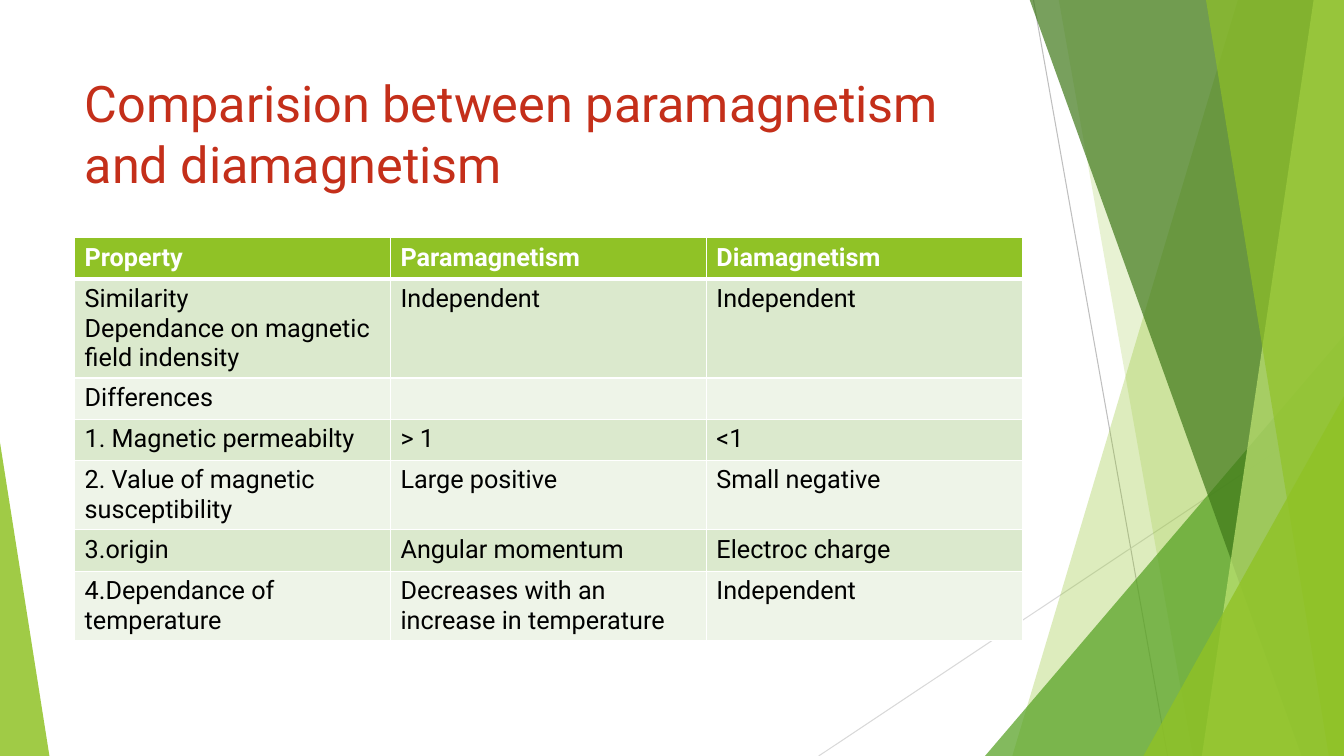
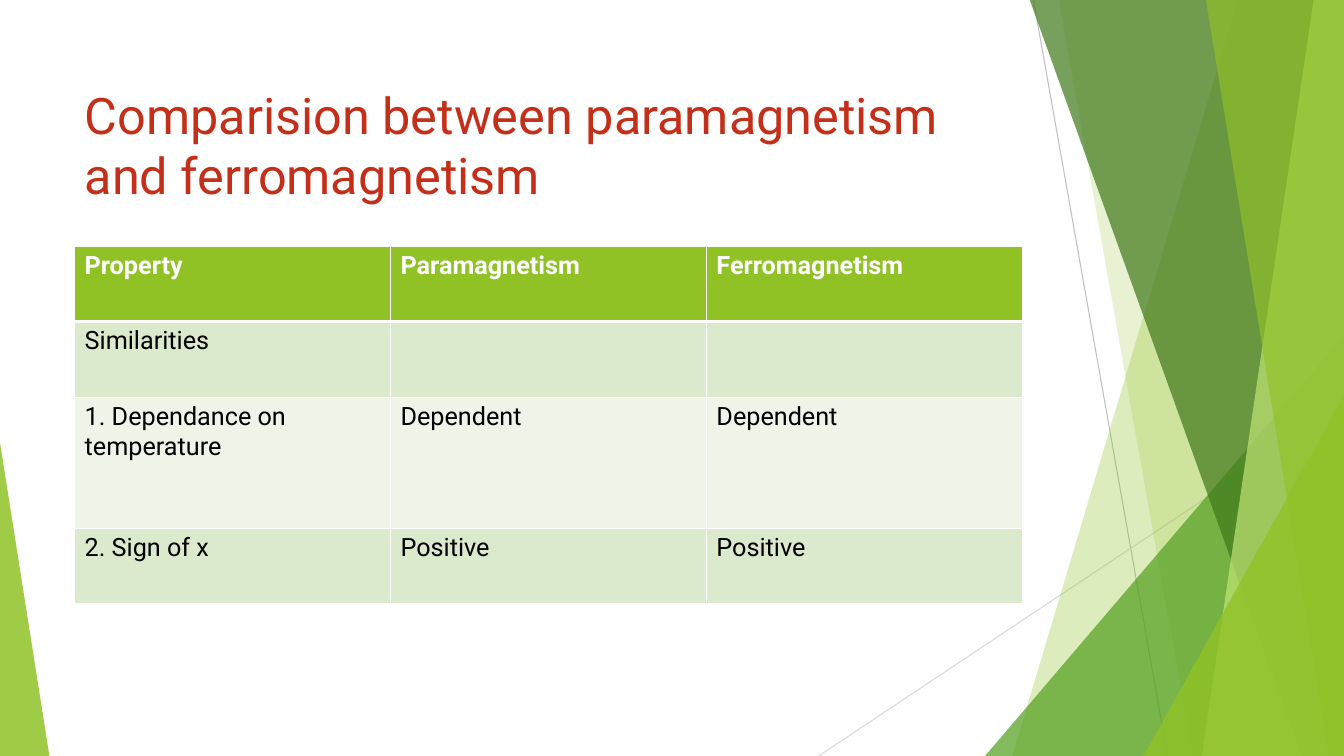
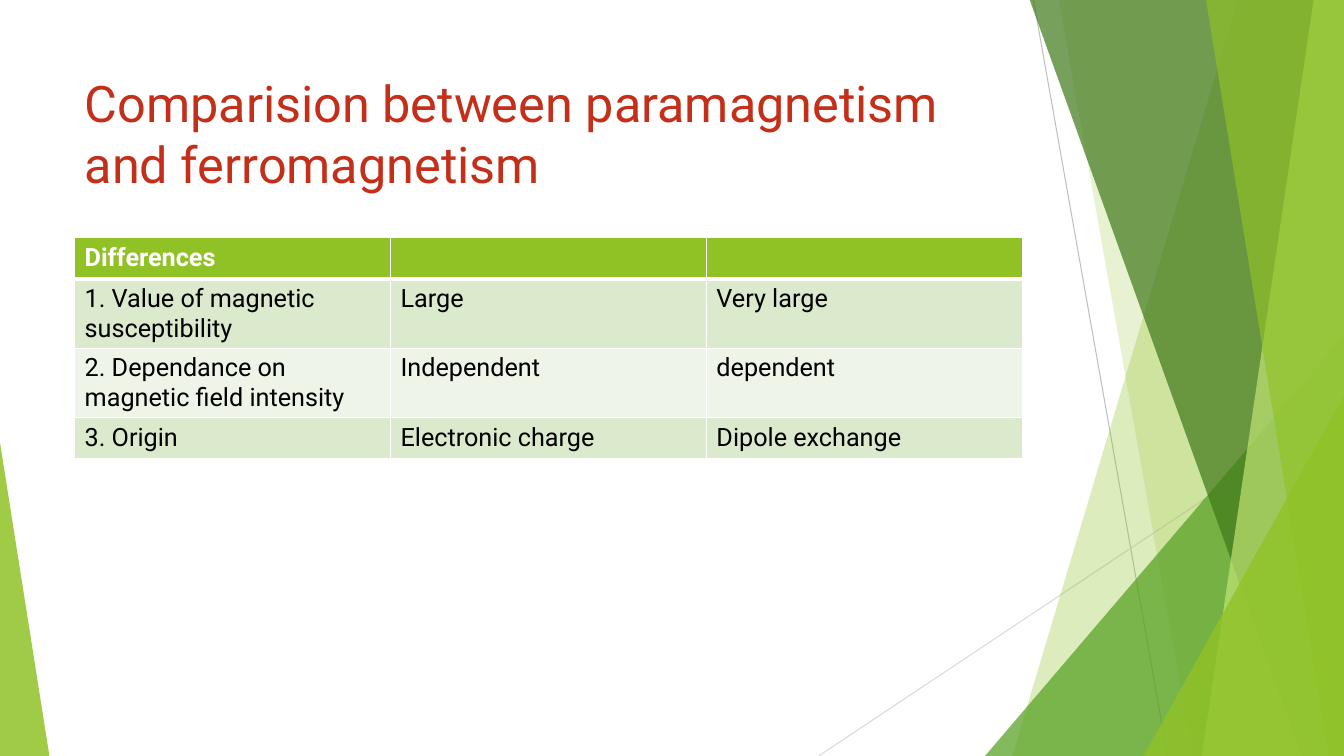
from lxml.etree import SubElement
from pptx import Presentation
from pptx.dml.color import RGBColor
from pptx.enum.shapes import MSO_CONNECTOR, MSO_SHAPE
from pptx.enum.text import MSO_ANCHOR, MSO_AUTO_SIZE, PP_ALIGN
from pptx.oxml import parse_xml
from pptx.oxml.ns import nsdecls, qn
from pptx.util import Inches, Pt

# Content
SLIDES = [
    {
        "title": "Comparision between paramagnetism and diamagnetism",
        "title_top": 0.67,
        "table_top": 2.36,
        "row_heights": [0.41] * 7,
        "rows": [
            ("Property", "Paramagnetism", "Diamagnetism"),
            ("Similarity\nDependance on magnetic field indensity", "Independent", "Independent"),
            ("Differences", "", ""),
            ("1. Magnetic permeabilty", "> 1", "<1"),
            ("2. Value of magnetic susceptibility", "Large positive", "Small negative"),
            ("3.origin", "Angular momentum", "Electroc charge"),
            ("4.Dependance of temperature", "Decreases with an increase in temperature",
             "Independent"),
        ],
    },
    {
        "title": "Comparision between paramagnetism and ferromagnetism",
        "title_top": 0.78,
        "table_top": 2.44,
        "row_heights": [0.75, 0.75, 1.3, 0.75],
        "rows": [
            ("Property", "Paramagnetism", "Ferromagnetism"),
            ("Similarities", "", ""),
            ("1. Dependance on temperature", "Dependent", "Dependent"),
            ("2. Sign of x", "Positive", "Positive"),
        ],
    },
    {
        "title": "Comparision between paramagnetism and ferromagnetism",
        "title_top": 0.67,
        "table_top": 2.36,
        "row_heights": [0.41] * 4,
        "rows": [
            ("Differences", "", ""),
            ("1. Value of magnetic susceptibility", "Large", "Very large"),
            ("2. Dependance on magnetic field intensity", "Independent", "dependent"),
            ("3. Origin", "Electronic charge", "Dipole exchange"),
        ],
    },
]

# Shared style
COLORS = {
    "title": "C42F1A", "text": "000000", "white": "FFFFFF",
    "lime": "90C226", "green": "54A021", "forest": "3F7819", "pale": "C0E474",
    "odd_row": "DBE9CD", "even_row": "EEF4E8",
    "steep_line": "BFBFBF", "flat_line": "D9D9D9",
}
FONT = "Roboto"
WIDTH, HEIGHT = 13.33, 7.5
LEFT, CONTENT_WIDTH, TITLE_HEIGHT = 0.74, 9.4, 1.44
BAND_TOP = -0.01

# Backdrop, back to front: lines (from, to, color)
LINES = [
    ((10.25, 0), (11.58, HEIGHT), "steep_line"),
    ((WIDTH, 4.03), (8.12, HEIGHT), "flat_line"),
]
# Bands run to the right edge (top x, bottom x); triangles are (left, top, width, tip)
FACETS = [
    ("band", (12.28, 10.04), "lime", 30),
    ("band", (10.5, 11.83), "lime", 20),
    ("triangle", (9.77, 3.33, 3.56, 1), "green", 72),
    ("band", (10.21, 12.91), "forest", 70),
    ("band", (13.03, 11.92), "pale", 70),
    ("band", (11.96, 13.18), "lime", 65),
    ("triangle", (11.34, 3.93, 1.99, 1), "lime", 80),
    ("triangle", (0, 4.39, 0.49, 0), "lime", 85),
]


def rgb(name):
    return RGBColor.from_string(COLORS[name])


def add_band(shapes, top_x, bottom_x):
    builder = shapes.build_freeform(Inches(top_x), Inches(BAND_TOP))
    corners = [(WIDTH, BAND_TOP), (WIDTH, HEIGHT), (bottom_x, HEIGHT)]
    builder.add_line_segments([(Inches(x), Inches(y)) for x, y in corners], close=True)
    return builder.convert_to_shape()


def add_triangle(shapes, left, top, width, tip):
    shape = shapes.add_shape(MSO_SHAPE.ISOSCELES_TRIANGLE, Inches(left), Inches(top),
                             Inches(width), Inches(HEIGHT - top))
    shape.adjustments[0] = tip
    return shape


def add_backdrop(slide, layout):
    """Draw the facets as a group and move it to the layout, behind the title."""
    group = slide.shapes.add_group_shape()
    for start, end, color in LINES:
        line = group.shapes.add_connector(
            MSO_CONNECTOR.STRAIGHT, *[Inches(value) for value in start + end])
        line.line.color.rgb = rgb(color)
        line.line.width = Pt(0.75)
        SubElement(line.element.spPr, qn("a:effectLst"))
    builders = {"band": add_band, "triangle": add_triangle}
    for kind, geometry, color, opacity in FACETS:
        shape = builders[kind](group.shapes, *geometry)
        shape.shadow.inherit = False
        shape.line.fill.background()
        shape.fill.solid()
        shape.fill.fore_color.rgb = rgb(color)
        fill_color = shape.element.spPr.find(qn("a:solidFill")).find(qn("a:srgbClr"))
        SubElement(fill_color, qn("a:alpha"), val=str(opacity * 1000))
    layout.shapes.element.insert(2, group.element)


def set_title(slide, text, top):
    title = slide.shapes.title
    title.left, title.top = Inches(LEFT), Inches(top)
    title.width, title.height = Inches(CONTENT_WIDTH), Inches(TITLE_HEIGHT)
    frame = title.text_frame
    frame.text = text
    frame.word_wrap = True
    frame.auto_size = MSO_AUTO_SIZE.NONE
    frame.vertical_anchor = MSO_ANCHOR.TOP
    paragraph = frame.paragraphs[0]
    paragraph.alignment = PP_ALIGN.LEFT
    style_font(paragraph.font, 36, "title")


def style_font(font, size, color, bold=False):
    font.name, font.size, font.bold = FONT, Pt(size), bold
    font.color.rgb = rgb(color)


def set_borders(cell, bottom_points):
    properties = cell._tc.get_or_add_tcPr()
    sides = [("L", 1), ("R", 1), ("T", 1), ("B", bottom_points)]
    for index, (side, points) in enumerate(sides):
        properties.insert(index, parse_xml(
            f'<a:ln{side} {nsdecls("a")} w="{Pt(points)}"><a:solidFill>'
            f'<a:srgbClr val="{COLORS["white"]}"/></a:solidFill></a:ln{side}>'))


def add_comparison(slide, rows, row_heights, top):
    frame = slide.shapes.add_table(
        len(rows), len(rows[0]), Inches(LEFT), Inches(top),
        Inches(CONTENT_WIDTH), Inches(sum(row_heights)))
    table = frame.table
    for row_index, (texts, height) in enumerate(zip(rows, row_heights)):
        table.rows[row_index].height = Inches(height)
        header = row_index == 0
        fill = "lime" if header else "odd_row" if row_index % 2 else "even_row"
        for column_index, text in enumerate(texts):
            cell = table.cell(row_index, column_index)
            cell.text = text
            cell.fill.solid()
            cell.fill.fore_color.rgb = rgb(fill)
            set_borders(cell, 3 if header else 1)
            if row_index == 1:
                # The thick rule below the header is shared with this row
                cell._tc.tcPr.find(qn("a:lnT")).set("w", str(Pt(3)))
            for paragraph in cell.text_frame.paragraphs:
                style_font(paragraph.font, 18, "white" if header else "text", header)


def main():
    presentation = Presentation()
    presentation.slide_width, presentation.slide_height = Inches(WIDTH), Inches(HEIGHT)
    layout = presentation.slide_layouts.get_by_name("Title Only")
    for index, content in enumerate(SLIDES):
        slide = presentation.slides.add_slide(layout)
        if index == 0:
            add_backdrop(slide, layout)
        set_title(slide, content["title"], content["title_top"])
        add_comparison(slide, content["rows"], content["row_heights"], content["table_top"])
    presentation.save("out.pptx")


if __name__ == "__main__":
    main()
